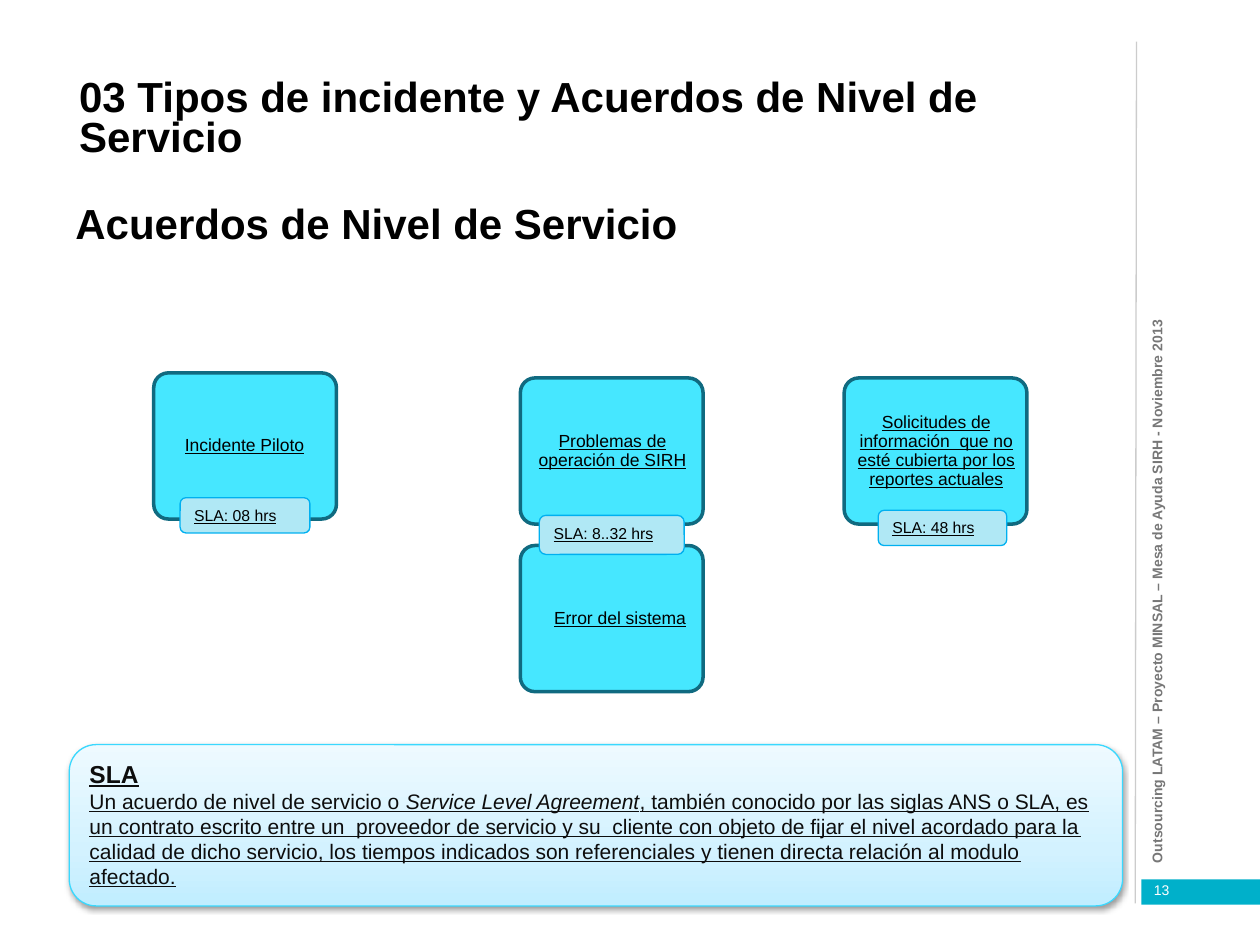
"""Builds the service level agreement slide with its incident cards."""
from lxml.etree import SubElement
from pptx import Presentation
from pptx.dml.color import RGBColor
from pptx.enum.shapes import MSO_CONNECTOR as CONN, MSO_SHAPE as SHAPE
from pptx.enum.text import MSO_ANCHOR as ANCHOR, PP_ALIGN as ALIGN
from pptx.oxml.ns import qn
from pptx.util import Inches, Pt

C = {"black": "000000", "white": "FFFFFF", "gray": "777777", "rule": "CCCCCC",
     "teal": "00B0CA", "card": "46E7FF", "edge": "106A80", "tag": "B0E8F5",
     "tag_edge": "00B0F0", "note_edge": "3AD8FE", "ink": "0D0D0D"}
FOOTER = "Outsourcing LATAM – Proyecto MINSAL – Mesa de Ayuda SIRH - Noviembre 2013"
PAGE = "13"
TITLES = [
    ("03 Tipos de incidente y Acuerdos de Nivel de Servicio", (0.53, 0.59, 8.24, 0.72)),
    ("Acuerdos de Nivel de Servicio", (0.5, 1.6, 8.24, 0.56)),
]
CARDS = [
    ("Incidente Piloto", 1.22, 2.96, 0.03),
    ("Problemas de operación de SIRH", 4.13, 3, 0.04),
    ("Error del sistema", 4.13, 4.33, 0.1),
    ("Solicitudes de información  que no esté cubierta por los reportes actuales",
     6.7, 3, 0.04),
]
CARD_W, CARD_H, PAD = 1.45, 1.16, 0.035
TAGS = [
    ("SLA: 08 hrs", (1.43, 3.95, 1.03, 0.28)),
    ("SLA: 8..32 hrs", (4.28, 4.09, 1.15, 0.31)),
    ("SLA: 48 hrs", (6.97, 4.05, 1.02, 0.28)),
]
NOTE_BOX = (0.55, 5.91, 8.36, 1.28)
NOTE = [
    [("SLA", {"size": Pt(14), "bold": True})],
    [("Un acuerdo de nivel de servicio o ", {}),
     ("Service Level Agreement", {"italic": True}),
     (", también conocido por las siglas ANS o SLA, es un contrato escrito entre un  "
      "proveedor de servicio y su  cliente con objeto de fijar el nivel acordado para la "
      "calidad de dicho servicio, los tiempos indicados son referenciales y tienen directa "
      "relación al modulo afectado.", {})],
]
NOTE_STOPS = [(0, "C0EDFF"), (35, "D3F2FF"), (100, "EEFAFF")]


def rgb(name):
    return RGBColor.from_string(C[name])


def add_run(p, text, color, **fmt):
    r = p.add_run()
    r.text = text
    r.font.name = "Arial"
    r.font.color.rgb = rgb(color)
    for key, value in fmt.items():
        setattr(r.font, key, value)


def add_box(shapes, kind, box, fill, line=None, width=0.75):
    sp = shapes.add_shape(kind, *map(Inches, box))
    sp.shadow.inherit = False
    sp.fill.solid()
    sp.fill.fore_color.rgb = rgb(fill)
    if line:
        sp.line.color.rgb = rgb(line)
        sp.line.width = Pt(width)
    else:
        sp.line.fill.background()
    tf = sp.text_frame
    tf.vertical_anchor = ANCHOR.TOP
    tf.paragraphs[0].alignment = ALIGN.LEFT
    return sp


def add_text(shapes, text, box, color, inset=None, anchor=ANCHOR.TOP, align=ALIGN.LEFT,
             spacing=None, **fmt):
    sp = shapes.add_textbox(*map(Inches, box))
    tf = sp.text_frame
    tf.word_wrap = True
    tf.vertical_anchor = anchor
    if inset is not None:
        for side in ("left", "top", "right", "bottom"):
            setattr(tf, f"margin_{side}", Inches(inset))
    p = tf.paragraphs[0]
    p.alignment = align
    p.line_spacing = spacing
    add_run(p, text, color, **fmt)
    return sp


def add_frame(shapes):
    add_box(shapes, SHAPE.RECTANGLE, (9.06, 6.98, 0.94, 0.2), "teal")
    sp = add_text(shapes, FOOTER, (6.19, 3.78, 5.98, 0.16), "gray", inset=0,
                  anchor=ANCHOR.MIDDLE, size=Pt(8), bold=True)
    sp.rotation = 270
    line = shapes.add_connector(CONN.STRAIGHT, *map(Inches, (9.02, 0.33, 9.01, 7.17)))
    line.line.color.rgb = rgb("rule")
    line.line.width = Pt(0.75)
    SubElement(line._element.spPr, qn("a:effectLst"))
    add_text(shapes, PAGE, (9.06, 6.95, 0.94, 0.24), "white", size=Pt(8))


def add_card(shapes, text, x, y, dx):
    group = shapes.add_group_shape().shapes
    sp = add_box(group, SHAPE.ROUNDED_RECTANGLE, (x, y, CARD_W, CARD_H), "card", "edge", 2)
    sp.adjustments[0] = 0.1
    box = (x + dx, y + PAD, CARD_W - 2 * PAD, CARD_H - 2 * PAD)
    add_text(group, text, box, "black", inset=0.02, anchor=ANCHOR.MIDDLE,
             align=ALIGN.CENTER, spacing=0.9, size=Pt(10), underline=True)


def add_note(shapes):
    sp = add_box(shapes, SHAPE.ROUNDED_RECTANGLE, NOTE_BOX, "white", "note_edge")
    sp.fill.gradient()
    sp.fill.gradient_angle = 90
    spPr = sp._element.spPr
    stops = spPr.find(".//" + qn("a:gsLst"))
    for old in list(stops):
        stops.remove(old)
    for pos, color in NOTE_STOPS:
        gs = SubElement(stops, qn("a:gs"), pos=str(pos * 1000))
        SubElement(gs, qn("a:srgbClr"), val=color)
    shadow = SubElement(spPr.find(qn("a:effectLst")), qn("a:outerShdw"),
                        blurRad=str(Pt(3.1)), dist=str(Pt(1.6)), dir="5400000",
                        rotWithShape="0")
    clr = SubElement(shadow, qn("a:srgbClr"), val=C["black"])
    SubElement(clr, qn("a:alpha"), val="38000")
    tf = sp.text_frame
    for i, runs in enumerate(NOTE):
        p = tf.add_paragraph() if i else tf.paragraphs[0]
        p.alignment = ALIGN.LEFT
        for text, fmt in runs:
            add_run(p, text, "ink", **{"size": Pt(12), "underline": True, **fmt})


def main():
    prs = Presentation()
    prs.slide_width, prs.slide_height = Inches(10), Inches(7.5)
    s = prs.slides.add_slide(prs.slide_layouts[6])
    add_frame(s.shapes)
    for text, box in TITLES:
        add_text(s.shapes, text, box, "black", spacing=Pt(23), size=Pt(24), bold=True)
    for card in CARDS:
        add_card(s.shapes, *card)
    for text, box in TAGS:
        sp = add_box(s.shapes, SHAPE.ROUNDED_RECTANGLE, box, "tag", "tag_edge")
        add_run(sp.text_frame.paragraphs[0], text, "black", size=Pt(9), underline=True)
    add_note(s.shapes)
    prs.save("out.pptx")


if __name__ == "__main__":
    main()
